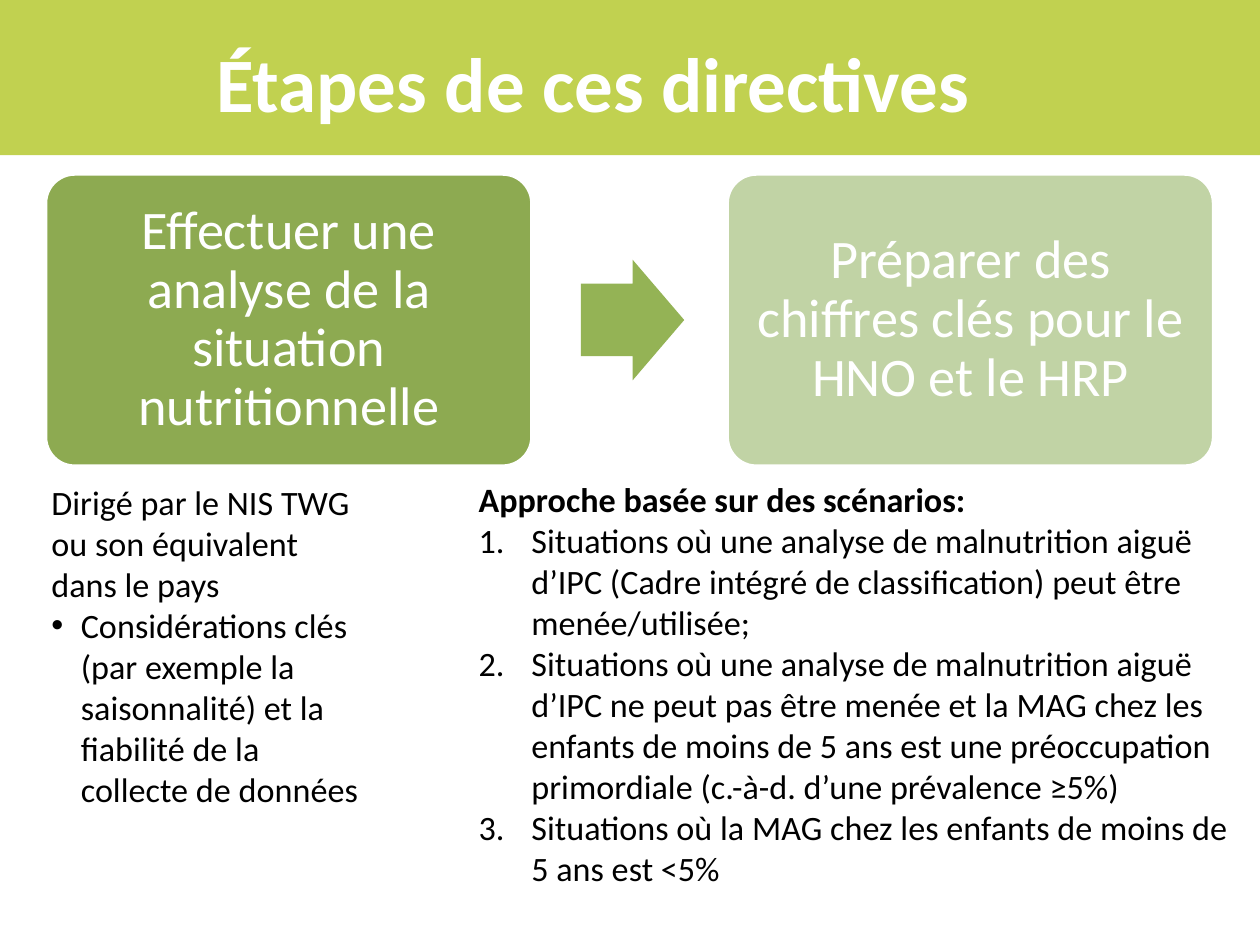
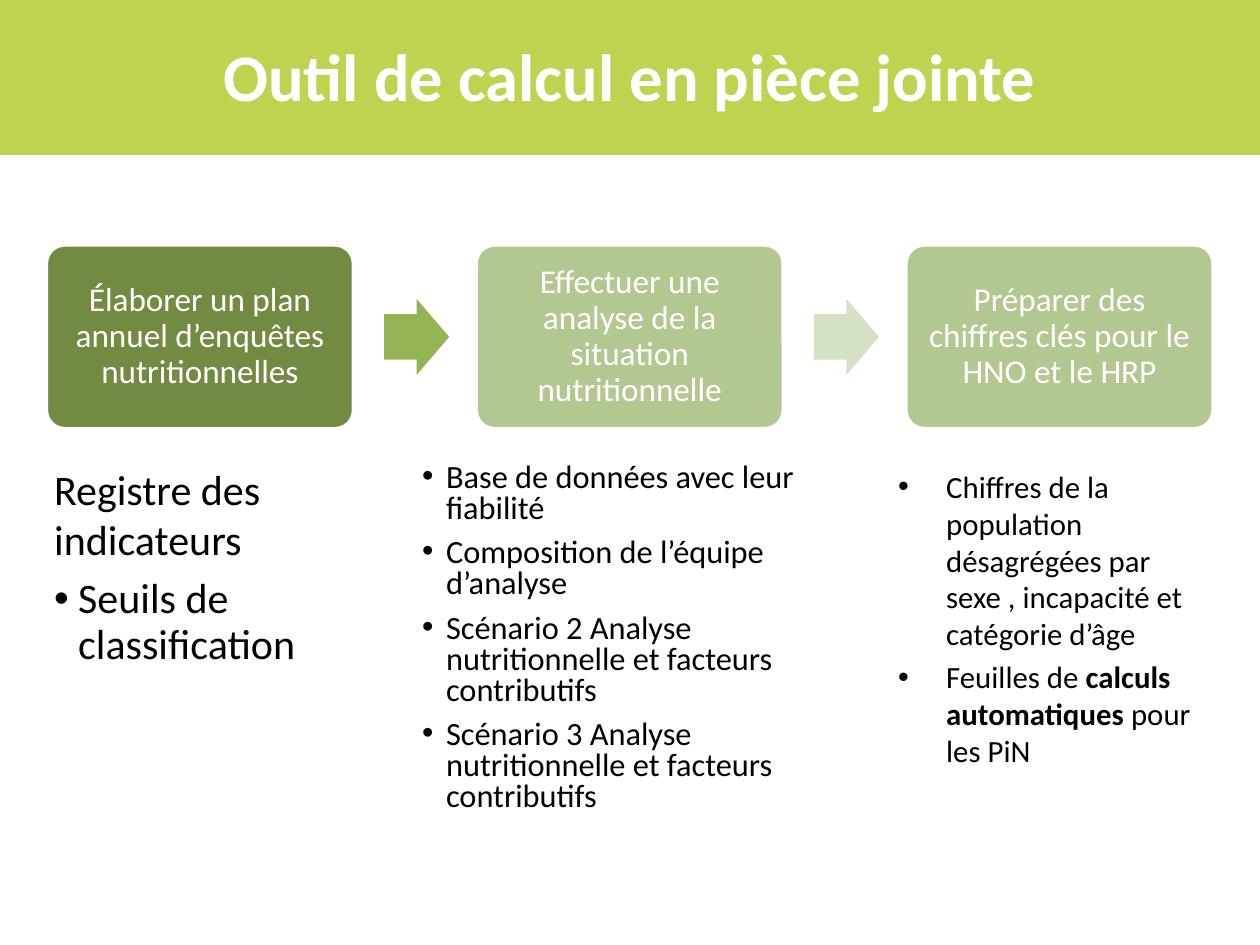
from lxml import etree
from pptx import Presentation
from pptx.dml.color import RGBColor
from pptx.enum import shapes, text
from pptx.oxml import ns
from pptx.util import Pt

COLORS = {
    "band": "C1D150", "white": "FFFFFF", "black": "000000",
    "olive": "738A42", "green": "8DAA51", "arrow": "94B355",
    "sage": "B3C791", "pale sage": "C1D3A5", "pale arrow": "D5E1C4",
}
FONT = "Calibri"
BULLET = ("buChar", "char", "•")
NUMBER = ("buAutoNum", "type", "arabicPeriod")
ANALYSIS = "Effectuer une analyse de la situation nutritionnelle"
FIGURES = "Préparer des chiffres clés pour le HNO et le HRP"


def add_run(paragraph, words, size, color, bold=False):
    run = paragraph.add_run()
    run.text = words
    run.font.name = FONT
    run.font.size = Pt(size)
    run.font.bold = bold
    run.font.color.rgb = RGBColor.from_string(COLORS[color])


def add_block(slide, kind, place, fill):
    block = slide.shapes.add_shape(kind, *[Pt(length) for length in place])
    block.shadow.inherit = False
    block.fill.solid()
    block.fill.fore_color.rgb = RGBColor.from_string(COLORS[fill])
    block.line.fill.background()
    return block


slides = [
    {
        "title": ("Étapes de ces directives", 44, 65.5, 547),
        "steps": [(ANALYSIS, "green"), (FIGURES, "pale sage")],
        "step place": (26, 99.4, 278, 167), "pitch": 389.5,
        "step size": 31, "step inset": 9.4,
        "arrows": ["arrow"], "arrow place": (306, 59, 69),
        "columns": [
            {"place": (22.3, 271.4, 191, 220), "inset": (7.2, 3.6), "size": 19.5,
             "indent": 16.8, "before": 0, "paragraphs": [
                 (None, 1, [("Dirigé par le NIS TWG ou son équivalent dans le pays", False)]),
                 (BULLET, 1, [("Considérations clés (par exemple la saisonnalité) et la "
                               "fiabilité de la collecte de données", False)])]},
            {"place": (266.4, 270, 453.6, 243), "inset": (7.2, 3.6), "size": 19.5,
             "indent": 30.2, "before": 0, "paragraphs": [
                 (None, 1, [("Approche basée sur des scénarios:", True)]),
                 (NUMBER, 1, [("Situations où une analyse de malnutrition aiguë d’IPC (Cadre "
                               "intégré de classification) peut être menée/utilisée;", False)]),
                 (NUMBER, 1, [("Situations où une analyse de malnutrition aiguë d’IPC ne peut "
                               "pas être menée et la MAG chez les enfants de moins de 5 ans est "
                               "une préoccupation primordiale (c.-à-d. d’une prévalence ≥5%)", False)]),
                 (NUMBER, 1, [("Situations où la MAG chez les enfants de moins de 5 ans "
                               "est <5%", False)])]},
        ],
    },
    {
        "title": ("Outil de calcul en pièce jointe", 38, 0, 720),
        "steps": [("Élaborer un plan annuel d’enquêtes nutritionnelles", "olive"),
                  (ANALYSIS, "sage"), (FIGURES, "sage")],
        "step place": (26.5, 140, 175.5, 105), "pitch": 245.6,
        "step size": 19, "step inset": 5.8,
        "arrows": ["arrow", "pale arrow"], "arrow place": (193, 37.2, 43.5),
        "columns": [
            {"place": (26, 262, 176.4, 160), "inset": (5, 2.9), "size": 24,
             "indent": 13.7, "before": 7.5, "paragraphs": [
                 (None, 1, [("Registre des indicateurs", False)]),
                 (BULLET, 0.9, [("Seuils de classification", False)])]},
            {"place": (236.2, 262, 270, 214), "inset": (5, 2.9), "size": 18.5,
             "indent": 13.7, "before": 7.5, "paragraphs": [
                 (BULLET, 0.8, [("Base de données avec leur fiabilité", False)]),
                 (BULLET, 0.8, [("Composition de l’équipe d’analyse", False)]),
                 (BULLET, 0.8, [("Scénario 2 Analyse nutritionnelle et facteurs contributifs", False)]),
                 (BULLET, 0.8, [("Scénario 3 Analyse nutritionnelle et facteurs contributifs", False)])]},
            {"place": (506.2, 263.5, 192.2, 160), "inset": (7.2, 3.6), "size": 17.6,
             "indent": 27.4, "before": 3.5, "paragraphs": [
                 (BULLET, 1, [("Chiffres de la population désagrégées par sexe , incapacité "
                               "et catégorie d’âge", False)]),
                 (BULLET, 1, [("Feuilles de ", False), ("calculs automatiques ", True),
                              ("pour les PiN", False)])]},
        ],
    },
]

deck = Presentation()
deck.slide_width, deck.slide_height = Pt(720), Pt(540)
title_only = deck.slide_layouts[5]

for content in slides:
    slide = deck.slides.add_slide(title_only)
    if len(deck.slides) == 1:
        band = add_block(slide, shapes.MSO_SHAPE.RECTANGLE, (0, -1.4, 720, 90), "band")
        title_only.shapes._spTree.insert(2, band._element)

    heading, heading_size, heading_left, heading_width = content["title"]
    title = slide.shapes.title
    title.left, title.top = Pt(heading_left), Pt(16.6)
    title.width, title.height = Pt(heading_width), Pt(110)
    title.text_frame.auto_size = text.MSO_AUTO_SIZE.NONE
    title.text_frame.vertical_anchor = text.MSO_ANCHOR.TOP
    heading_line = title.text_frame.paragraphs[0]
    heading_line.alignment = text.PP_ALIGN.CENTER
    add_run(heading_line, heading, heading_size, "white", True)

    left, top, width, height = content["step place"]
    for index, (label, fill) in enumerate(content["steps"]):
        step = add_block(slide, shapes.MSO_SHAPE.ROUNDED_RECTANGLE,
                         (left + index * content["pitch"], top, width, height), fill)
        step.adjustments[0] = 0.1
        step.line.color.rgb = RGBColor.from_string(COLORS["white"])
        step.line.width = Pt(2)
        frame = step.text_frame
        frame.word_wrap = True
        frame.vertical_anchor = text.MSO_ANCHOR.MIDDLE
        frame.margin_left = frame.margin_right = Pt(content["step inset"])
        frame.margin_top = frame.margin_bottom = Pt(content["step inset"])
        label_line = frame.paragraphs[0]
        label_line.alignment = text.PP_ALIGN.CENTER
        label_line.line_spacing = 0.9
        add_run(label_line, label, content["step size"], "white")

    offset, arrow_width, arrow_height = content["arrow place"]
    for index, fill in enumerate(content["arrows"]):
        arrow = add_block(slide, shapes.MSO_SHAPE.RIGHT_ARROW,
                          (left + offset + index * content["pitch"],
                           top + (height - arrow_height) / 2, arrow_width, arrow_height), fill)
        arrow.adjustments[0] = 0.6
        arrow.adjustments[1] = 0.5

    for column in content["columns"]:
        details = slide.shapes.add_textbox(*[Pt(length) for length in column["place"]])
        frame = details.text_frame
        frame.word_wrap = True
        side, edge = column["inset"]
        frame.margin_left = frame.margin_right = Pt(side)
        frame.margin_top = frame.margin_bottom = Pt(edge)
        for index, (mark, spacing, runs) in enumerate(column["paragraphs"]):
            line = frame.add_paragraph() if index else frame.paragraphs[0]
            line.line_spacing = spacing
            line.space_before = Pt(column["before"])
            if mark:
                tag, attribute, value = mark
                properties = line._p.get_or_add_pPr()
                properties.set("marL", str(Pt(column["indent"])))
                properties.set("indent", str(-Pt(column["indent"])))
                if mark == BULLET:
                    etree.SubElement(properties, ns.qn("a:buFont")).set("typeface", "Arial")
                etree.SubElement(properties, ns.qn("a:" + tag)).set(attribute, value)
            for words, bold in runs:
                add_run(line, words, column["size"], "black", bold)

deck.save("out.pptx")
